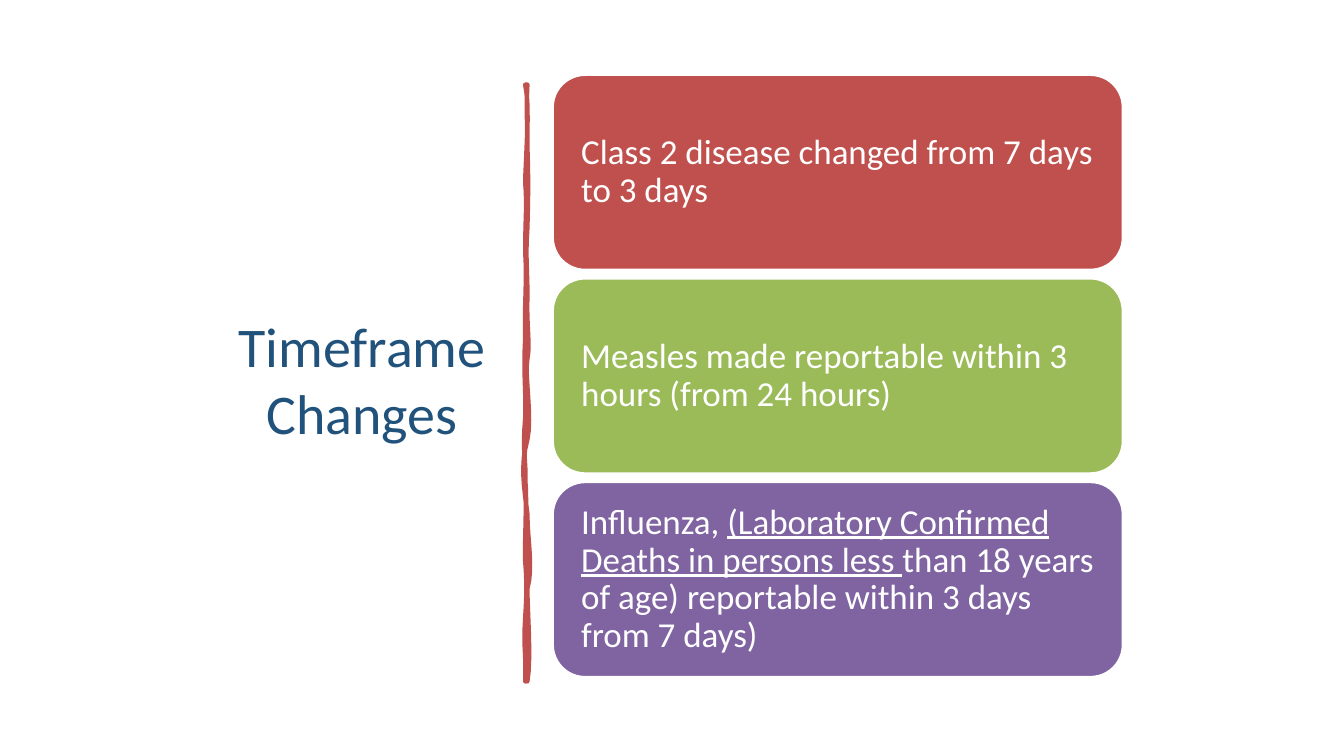
from pptx import Presentation
from pptx.dml.color import RGBColor
from pptx.enum.shapes import MSO_SHAPE
from pptx.enum.text import MSO_ANCHOR, MSO_AUTO_SIZE, PP_ALIGN
from pptx.util import Inches, Pt

ROUNDED = MSO_SHAPE.ROUNDED_RECTANGLE
MIDDLE = MSO_ANCHOR.MIDDLE
NO_AUTOFIT = MSO_AUTO_SIZE.NONE
CENTER, LEFT = PP_ALIGN.CENTER, PP_ALIGN.LEFT

NAVY = RGBColor(0x20, 0x52, 0x7C)
RED = RGBColor(0xC0, 0x50, 0x4D)
GREEN = RGBColor(0x9B, 0xBB, 0x59)
PURPLE = RGBColor(0x80, 0x64, 0xA2)
WHITE = RGBColor(0xFF, 0xFF, 0xFF)

# Each card: fill and its text runs as (text, underlined)
CARDS = [
    (RED, [("Class 2 disease changed from 7 days to 3 days", False)]),
    (GREEN, [("Measles made reportable within 3 hours (from 24 hours)", False)]),
    (PURPLE, [("Influenza, ", False),
              ("(Laboratory Confirmed Deaths in persons less ", True),
              ("than 18 years of age) reportable within 3 days from 7 days)", False)]),
]
CARD_LEFT, CARD_TOP, CARD_WIDTH, CARD_HEIGHT = 5.48, 0.74, 5.66, 1.94
CARD_PITCH = 2.02

# Brush stroke outline: start point, then cubic curves (two controls, end)
STROKE_START = (5.23, 0.84)
STROKE_CURVES = [
    ((5.22, 1.03), (5.23, 1.16), (5.23, 1.46)),
    ((5.24, 1.74), (5.24, 1.91), (5.23, 2.26)),
    ((5.21, 2.58), (5.23, 2.62), (5.23, 2.94)),
    ((5.22, 3.25), (5.26, 3.42), (5.23, 3.56)),
    ((5.20, 3.72), (5.28, 4.14), (5.23, 4.36)),
    ((5.16, 4.62), (5.20, 4.83), (5.23, 5.10)),
    ((5.23, 5.35), (5.29, 5.63), (5.23, 5.84)),
    ((5.23, 6.06), (5.27, 6.53), (5.23, 6.76)),
    ((5.22, 6.75), (5.22, 6.76), (5.21, 6.76)),
    ((5.22, 6.45), (5.19, 6.44), (5.21, 6.13)),
    ((5.23, 5.83), (5.22, 5.70), (5.21, 5.57)),
    ((5.20, 5.46), (5.23, 4.94), (5.21, 4.77)),
    ((5.22, 4.62), (5.18, 4.47), (5.21, 4.15)),
    ((5.22, 3.86), (5.19, 3.73), (5.21, 3.35)),
    ((5.20, 3.00), (5.23, 2.79), (5.21, 2.50)),
    ((5.21, 2.16), (5.23, 2.03), (5.21, 1.81)),
    ((5.21, 1.65), (5.26, 1.04), (5.21, 0.84)),
]


def curve_points(start, curves, steps=8):
    """Return points along a chain of cubic curves, in EMU."""
    points = []
    for first, second, end in curves:
        for step in range(1, steps + 1):
            t = step / steps
            weights = ((1 - t) ** 3, 3 * t * (1 - t) ** 2, 3 * t * t * (1 - t), t ** 3)
            corners = (start, first, second, end)
            points.append(tuple(
                Inches(sum(weight * corner[axis] for weight, corner in zip(weights, corners)))
                for axis in (0, 1)))
        start = end
    return points


class SlideBuilder:
    font_name = "Calibri"

    def __init__(self, slide):
        self.slide = slide

    def paint(self, shape, fill, line, width):
        shape.shadow.inherit = False
        shape.fill.solid()
        shape.fill.fore_color.rgb = fill
        shape.line.color.rgb = line
        shape.line.width = Pt(width)

    def fill_text(self, frame, runs, size, color, alignment):
        """Put the runs in the frame's first paragraph and return it."""
        frame.word_wrap = True
        frame.auto_size = NO_AUTOFIT
        frame.vertical_anchor = MIDDLE
        paragraph = frame.paragraphs[0]
        paragraph.alignment = alignment
        for text, underlined in runs:
            run = paragraph.add_run()
            run.text = text
            run.font.name = self.font_name
            run.font.size = Pt(size)
            run.font.color.rgb = color
            if underlined:
                run.font.underline = True
        return paragraph

    def title(self, text, left, top, width, height):
        shape = self.slide.shapes.title
        shape.left, shape.top = Inches(left), Inches(top)
        shape.width, shape.height = Inches(width), Inches(height)
        self.fill_text(shape.text_frame, [(text, False)], 40, NAVY, CENTER)

    def brush_stroke(self, start, curves, color):
        builder = self.slide.shapes.build_freeform(Inches(start[0]), Inches(start[1]))
        builder.add_line_segments(curve_points(start, curves), close=True)
        self.paint(builder.convert_to_shape(), color, color, 3.25)

    def card(self, top, fill, runs):
        shape = self.slide.shapes.add_shape(
            ROUNDED, Inches(CARD_LEFT), Inches(top), Inches(CARD_WIDTH), Inches(CARD_HEIGHT))
        self.paint(shape, fill, WHITE, 2)
        frame = shape.text_frame
        frame.margin_left = frame.margin_right = Inches(0.19)
        frame.margin_top = frame.margin_bottom = Inches(0.19)
        self.fill_text(frame, runs, 25, WHITE, LEFT).line_spacing = 0.9


def main():
    presentation = Presentation()
    presentation.slide_width, presentation.slide_height = Inches(13.33), Inches(7.5)
    builder = SlideBuilder(presentation.slides.add_slide(presentation.slide_layouts[5]))
    builder.title("Timeframe Changes", 2.19, 0.7, 2.8, 6.11)
    builder.brush_stroke(STROKE_START, STROKE_CURVES, RED)
    for index, (fill, runs) in enumerate(CARDS):
        builder.card(CARD_TOP + index * CARD_PITCH, fill, runs)
    presentation.save("out.pptx")


if __name__ == "__main__":
    main()
